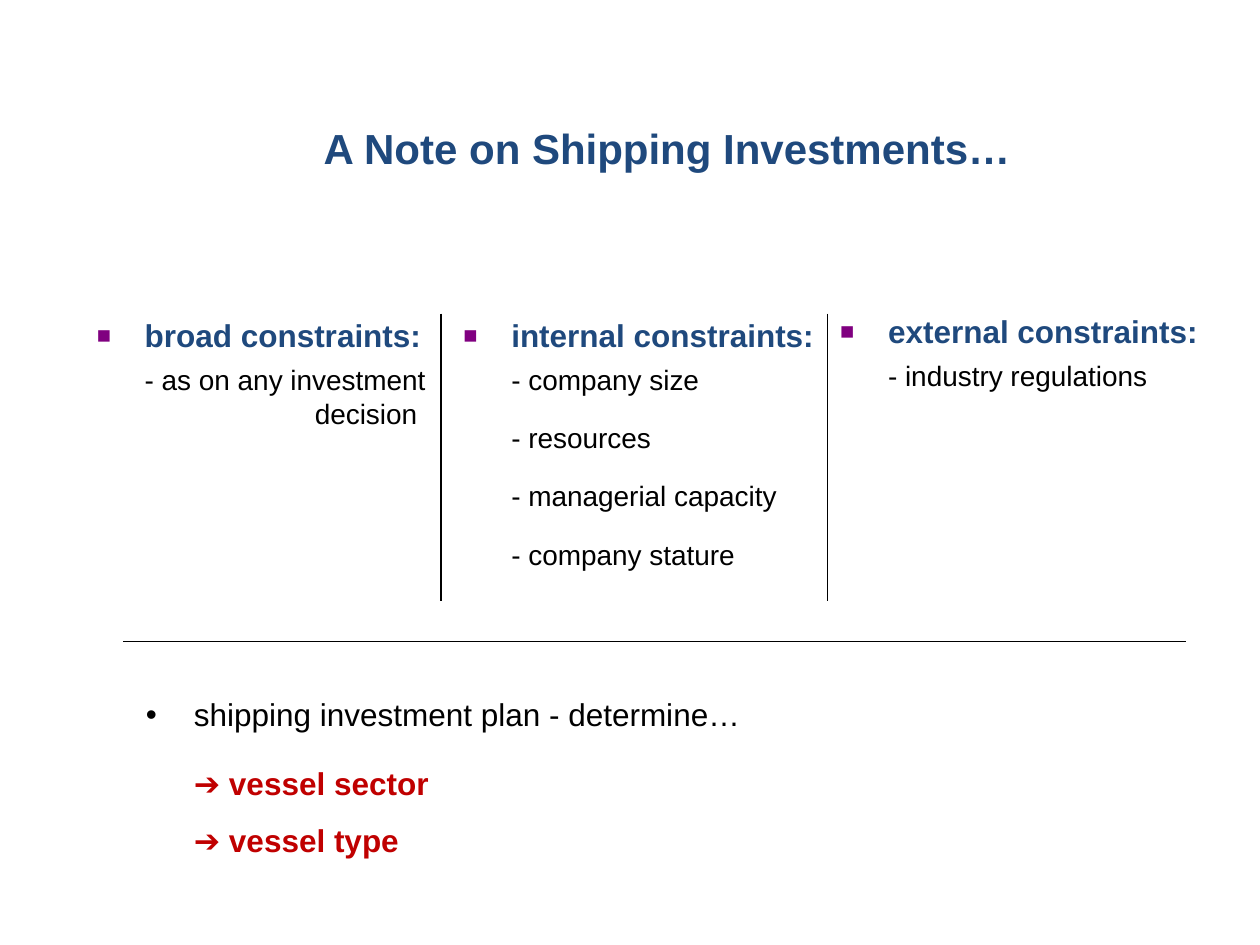
"""Build the slide on constraints and planning in shipping investments."""
from lxml.etree import SubElement
from pptx import Presentation
from pptx.dml.color import RGBColor
from pptx.enum.shapes import MSO_CONNECTOR
from pptx.enum.text import MSO_ANCHOR, PP_ALIGN
from pptx.oxml.ns import qn
from pptx.util import Inches, Pt

THEME = {
    "font": "Arial",
    "heading": "1F497D", "text": "000000", "accent": "C00000", "bullet": "800080",
    "title_size": 24, "heading_size": 18, "item_size": 16, "line_width": 0.75,
}
INDENT = 0.38
ITEM_GAP = 14

TITLE = "A Note on Shipping Investments…"
COLUMNS = [
    {"box": (0.67, 2.25, 2.99, 3.54), "inset": 0.26, "heading": "broad constraints:",
     "items": ["- as on any investment"], "continuation": "decision"},
    {"box": (3.58, 2.25, 3.07, 4.09), "inset": 0.26, "heading": "internal constraints:",
     "items": ["- company size", "- resources", "- managerial capacity", "- company stature"]},
    {"box": (6.57, 2.41, 3.23, 3.7), "inset": 0.07, "heading": "external constraints:",
     "items": ["- industry regulations"]},
]
PLAN_BOX = (1.06, 5.32, 5.51, 1.73)
PLAN = "shipping investment plan - determine…"
PLAN_STEPS = ["➔ vessel sector", "➔ vessel type"]
RULES = [(0.98, 5.09, 9.41, 5.09)] + [(x, 2.49, x, 4.77) for x in (3.5, 6.57)]


def add_text_box(slide, box, inset=0.05):
    """Add an empty wrapping text box and return its text frame."""
    text_frame = slide.shapes.add_textbox(*map(Inches, box)).text_frame
    text_frame.word_wrap = True
    text_frame.margin_top = Inches(inset)
    return text_frame


def style_run(paragraph, size, color, bold=False):
    """Apply the theme font to the only run of a paragraph."""
    font = paragraph.runs[0].font
    font.name = THEME["font"]
    font.size = Pt(THEME[size])
    font.bold = bold
    font.color.rgb = RGBColor.from_string(THEME[color])


def add_paragraph(text_frame, text, size, color, bold=False, before=0, left=INDENT, spacing=1):
    """Add an indented paragraph, using the first one while it is empty."""
    first = text_frame.paragraphs[0]
    paragraph = text_frame.add_paragraph() if first.runs else first
    paragraph.text = text
    paragraph.space_before = Pt(before)
    paragraph.line_spacing = spacing
    paragraph._p.get_or_add_pPr().set("marL", str(Inches(left)))
    style_run(paragraph, size, color, bold)
    return paragraph


def add_bullet(paragraph, character, color, percent=100):
    """Give a paragraph a hanging bullet."""
    properties = paragraph._p.get_or_add_pPr()
    properties.set("indent", str(-Inches(INDENT)))
    bullet_color = SubElement(properties, qn("a:buClr"))
    SubElement(bullet_color, qn("a:srgbClr"), val=THEME[color])
    SubElement(properties, qn("a:buSzPct"), val=str(percent * 1000))
    SubElement(properties, qn("a:buFont"), typeface=THEME["font"])
    SubElement(properties, qn("a:buChar"), char=character)


def add_title(slide):
    """Place and format the title placeholder."""
    title = slide.shapes.title
    title.left, title.top, title.width, title.height = map(Inches, (0.83, 0.92, 8.93, 0.5))
    title.text_frame.text = TITLE
    title.text_frame.vertical_anchor = MSO_ANCHOR.MIDDLE
    paragraph = title.text_frame.paragraphs[0]
    paragraph.alignment = PP_ALIGN.CENTER
    style_run(paragraph, "title_size", "heading", True)


def add_column(slide, column):
    """Add a bulleted heading with its items."""
    text_frame = add_text_box(slide, column["box"], column["inset"])
    heading = add_paragraph(text_frame, column["heading"], "heading_size", "heading", True)
    add_bullet(heading, "■", "bullet", 75)
    for index, item in enumerate(column["items"]):
        add_paragraph(text_frame, item, "item_size", "text", before=ITEM_GAP if index else 5)
    if "continuation" in column:
        add_paragraph(text_frame, column["continuation"], "item_size", "text", left=INDENT + 1.35)


def add_plan(slide):
    """Add the investment plan and its steps."""
    text_frame = add_text_box(slide, PLAN_BOX)
    plan = add_paragraph(text_frame, PLAN, "heading_size", "text", before=2, spacing=1.5)
    add_bullet(plan, "•", "text")
    for index, step in enumerate(PLAN_STEPS):
        add_paragraph(text_frame, step, "heading_size", "accent", True,
                      before=0 if index else 7, spacing=1.5)


def add_rule(slide, ends):
    """Add a thin straight line without a shadow."""
    rule = slide.shapes.add_connector(MSO_CONNECTOR.STRAIGHT, *map(Inches, ends))
    rule.line.color.rgb = RGBColor.from_string(THEME["text"])
    rule.line.width = Pt(THEME["line_width"])
    SubElement(rule._element.spPr, qn("a:effectLst"))


def main():
    presentation = Presentation()
    presentation.slide_width, presentation.slide_height = Inches(10), Inches(7.5)
    slide = presentation.slides.add_slide(presentation.slide_layouts[5])
    add_title(slide)
    add_plan(slide)
    for column in COLUMNS:
        add_column(slide, column)
    for ends in RULES:
        add_rule(slide, ends)
    presentation.save("out.pptx")


if __name__ == "__main__":
    main()
